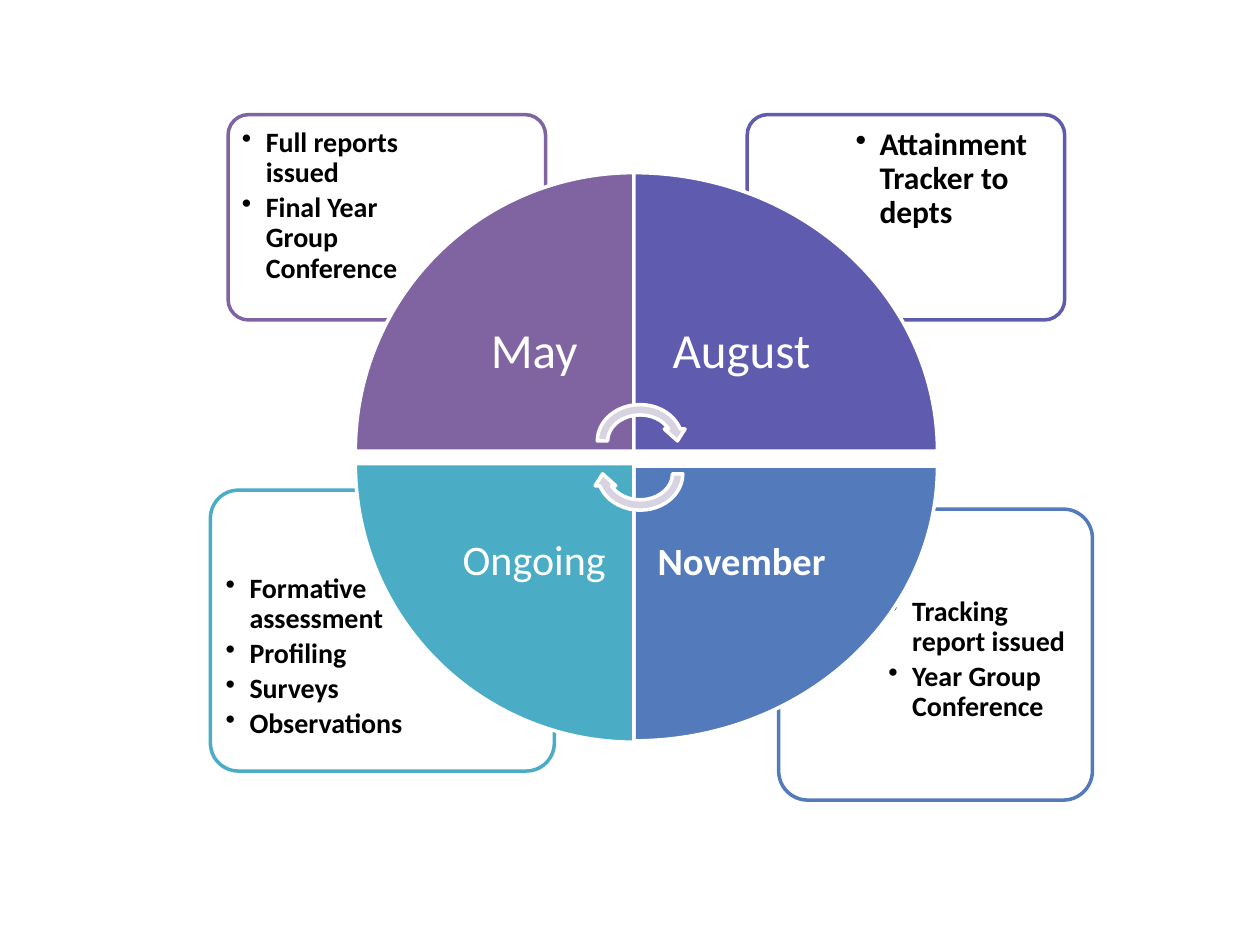
"""Builds a slide showing the yearly assessment cycle as four quadrants with detail cards."""

from typing import NamedTuple

from lxml.etree import SubElement
from pptx import Presentation
from pptx.dml.color import RGBColor
from pptx.enum.shapes import MSO_SHAPE
from pptx.enum.text import MSO_ANCHOR, PP_ALIGN
from pptx.oxml.ns import qn
from pptx.util import Inches, Pt

COLS, ROWS = 100, 75
FONT = "Calibri"
COLORS = {
    "may": "8064A2",
    "august": "5F5BAE",
    "november": "537ABA",
    "ongoing": "4BACC6",
    "arrow": "D8D3E0",
    "white": "FFFFFF",
    "black": "000000",
}

prs = Presentation()
prs.slide_width, prs.slide_height = Inches(10), Inches(7.5)
slide = prs.slides.add_slide(prs.slide_layouts[6])


class Box(NamedTuple):
    left: float
    top: float
    width: float
    height: float


class Card(NamedTuple):
    color: str
    frame: Box
    text: Box
    size: int
    items: list[str]


class Quadrant(NamedTuple):
    color: str
    label: str
    frame: Box
    rotation: int
    text: Box
    size: int
    inset: float
    bold: bool = False


def place(box: Box) -> tuple[int, int, int, int]:
    col, row = prs.slide_width / COLS, prs.slide_height / ROWS
    return (round(box.left * col), round(box.top * row),
            round(box.width * col), round(box.height * row))


def rgb(name: str) -> RGBColor:
    return RGBColor.from_string(COLORS[name])


def add_shape(kind: MSO_SHAPE, box: Box, fill: str, line: str, rotation: int = 0):
    s = slide.shapes.add_shape(kind, *place(box))
    s.shadow.inherit = False
    s.rotation = rotation
    s.fill.solid()
    s.fill.fore_color.rgb = rgb(fill)
    s.line.color.rgb = rgb(line)
    s.line.width = Pt(2)
    return s


def add_text(box: Box, lines: list[str], size: int, color: str, bold: bool,
             inset: float, bulleted: bool) -> None:
    tf = slide.shapes.add_textbox(*place(box)).text_frame
    tf.word_wrap = True
    tf.margin_left = tf.margin_right = tf.margin_top = tf.margin_bottom = Inches(inset)
    tf.vertical_anchor = MSO_ANCHOR.TOP if bulleted else MSO_ANCHOR.MIDDLE
    tf.text = "\n".join(lines)
    for p in tf.paragraphs:
        p.line_spacing = 0.9
        if bulleted:
            p.level = 1
            p.space_after = Pt(round(size * 0.16, 1))
            pPr = p._p.get_or_add_pPr()
            pPr.set("marL", str(Inches(0.19)))
            pPr.set("indent", str(-Inches(0.19)))
            SubElement(pPr, qn("a:buChar"), char="•")
        else:
            p.alignment = PP_ALIGN.CENTER
        for r in p.runs:
            r.font.name, r.font.size, r.font.bold = FONT, Pt(size), bold
            r.font.color.rgb = rgb(color)


def draw_card(card: Card) -> None:
    s = add_shape(MSO_SHAPE.ROUNDED_RECTANGLE, card.frame, "white", card.color)
    s.adjustments[0] = 0.1
    add_text(card.text, card.items, card.size, "black", True, 0.07, True)


def draw_quadrant(q: Quadrant) -> None:
    add_shape(MSO_SHAPE.PIE_WEDGE, q.frame, q.color, "white", q.rotation)
    add_text(q.text, [q.label], q.size, "white", q.bold, q.inset, False)


CARDS = [
    Card("november", Box(61.8, 40.4, 24.9, 23.1), Box(69.8, 46.7, 16.4, 16.3), 16,
         ["Tracking  report issued", "Year Group Conference"]),
    Card("ongoing", Box(16.7, 38.9, 27.3, 22.3), Box(17.2, 44.9, 18.1, 15.8), 16,
         ["Formative assessment", "Profiling", "Surveys", "Observations"]),
    Card("august", Box(59.3, 9.1, 25.2, 16.3), Box(67.2, 9.5, 16.9, 11.5), 18,
         ["Attainment Tracker to depts"]),
    Card("may", Box(18.1, 9.1, 25.2, 16.3), Box(18.5, 9.5, 16.9, 11.5), 16,
         ["Full reports issued", "Final Year Group Conference"]),
]
QUADRANTS = [
    Quadrant("may", "May", Box(28.2, 13.7, 22.1, 22.1), 0,
             Box(34.6, 20.2, 15.6, 15.6), 28, 0.22),
    Quadrant("august", "August", Box(51.3, 12.7, 22.1, 24.1), 90,
             Box(50.3, 20.2, 17.1, 15.6), 28, 0.22),
    Quadrant("november", "November", Box(50.3, 37, 24.1, 21.8), 180,
             Box(50.3, 37, 17.1, 15.4), 22, 0.17, True),
    Quadrant("ongoing", "Ongoing", Box(28.2, 36.8, 22.1, 22.1), 270,
             Box(34.6, 36.8, 15.6, 15.6), 24, 0.19),
]

for card in CARDS:
    draw_card(card)
for quadrant in QUADRANTS:
    draw_quadrant(quadrant)
for top, rotation in ((31.7, 0), (34.3, 180)):
    add_shape(MSO_SHAPE.CIRCULAR_ARROW, Box(47, top, 7.6, 6.6), "arrow", "white", rotation)

prs.save("out.pptx")
